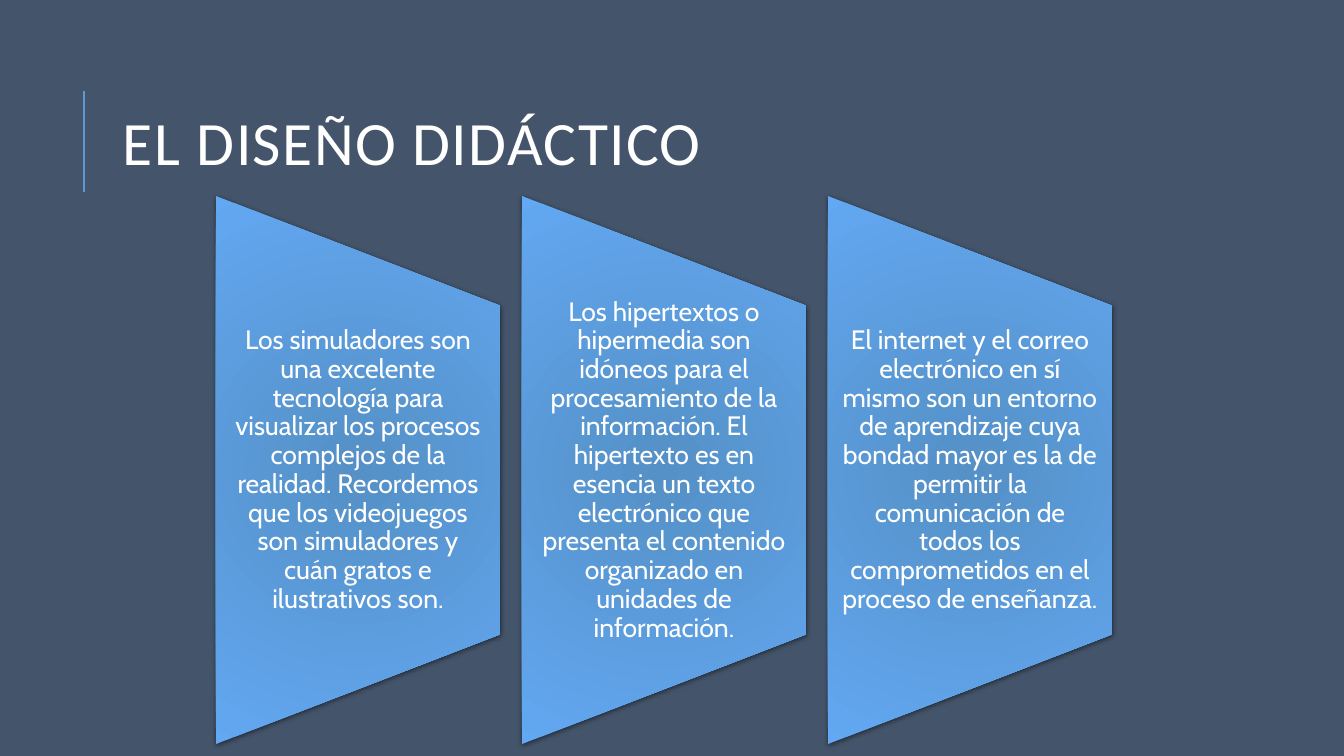
from lxml.etree import SubElement
from pptx import Presentation
from pptx.dml.color import RGBColor
from pptx.enum.shapes import MSO_CONNECTOR as Connector, MSO_SHAPE as Shape
from pptx.enum.text import MSO_ANCHOR as Anchor, PP_ALIGN as Align
from pptx.oxml.ns import qn
from pptx.util import Pt

HEADING = "EL DISEÑO DIDÁCTICO"
TOPICS = [
    "Los simuladores son una excelente tecnología para visualizar los procesos complejos de la realidad. "
    "Recordemos que los videojuegos son simuladores y cuán gratos e ilustrativos son.",
    "Los hipertextos o hipermedia son idóneos para el procesamiento de la información. El hipertexto es en "
    "esencia un texto electrónico que presenta el contenido organizado en unidades de información.",
    "El internet y el correo electrónico en sí mismo son un entorno de aprendizaje cuya bondad mayor es la de "
    "permitir la comunicación de todos los comprometidos en el proceso de enseñanza.",
]

THEME = {
    "background": "44546A", "accent": "5B9BD5", "panel": ("5590C6", "62A8F2"), "shadow": "000000",
    "heading": {"name": "Calibri", "size": Pt(44), "color": "FFFFFF"},
    "topic": {"name": "Cabin", "size": Pt(19), "color": "FFFFFF"},
}
SLIDE = (1344, 756)
RULE = (84, 192, 84, 91)
HEADING_BOX = (113, 65, 1071, 165)
PANEL_LEFT, PANEL_TOP, PANEL_WIDTH, PANEL_HEIGHT = 216, 196, 284, 548
PANEL_PITCH = 306
TOPIC_TOP, TOPIC_HEIGHT = 306, 329


def px(*lengths):
    return [round(length * 914400 / 100.8) for length in lengths]


def rgb(code):
    return RGBColor.from_string(code)


def set_all(target, values):
    for key, value in values.items():
        setattr(target, key, value)


def add_text(slide, box, words, style, align, spacing, insets):
    frame = slide.shapes.add_textbox(*px(*box)).text_frame
    left, top = px(*insets)
    set_all(frame, {"word_wrap": True, "vertical_anchor": Anchor.MIDDLE, "margin_left": left,
                    "margin_right": left, "margin_top": top, "margin_bottom": top})
    paragraph = frame.paragraphs[0]
    set_all(paragraph, {"alignment": align, "line_spacing": spacing})
    run = paragraph.add_run()
    run.text = words
    set_all(run.font, {"name": style["name"], "size": style["size"]})
    run.font.color.rgb = rgb(style["color"])
    return run


def add_panel(slide, left):
    x = left + (PANEL_WIDTH - PANEL_HEIGHT) / 2
    y = PANEL_TOP + (PANEL_HEIGHT - PANEL_WIDTH) / 2
    panel = slide.shapes.add_shape(Shape.FLOWCHART_MANUAL_OPERATION, *px(x, y, PANEL_HEIGHT, PANEL_WIDTH))
    panel.rotation = 270
    panel.line.fill.background()
    panel.shadow.inherit = False
    panel.fill.gradient()
    for stop, code in zip(panel.fill.gradient_stops, THEME["panel"]):
        stop.color.rgb = rgb(code)
    properties = panel._element.spPr
    gradient = properties.find(qn("a:gradFill"))
    gradient.remove(gradient.find(qn("a:lin")))
    radial = SubElement(gradient, qn("a:path"), {"path": "circle"})
    SubElement(radial, qn("a:fillToRect"), dict.fromkeys("ltrb", "100000"))
    shadow = SubElement(properties.find(qn("a:effectLst")), qn("a:outerShdw"), {
        "blurRad": str(Pt(4)), "dist": str(Pt(1)), "dir": "5400000", "rotWithShape": "0"})
    tint = SubElement(shadow, qn("a:srgbClr"), {"val": THEME["shadow"]})
    SubElement(tint, qn("a:alpha"), {"val": "50000"})


def main():
    deck = Presentation()
    deck.slide_width, deck.slide_height = px(*SLIDE)
    slide = deck.slides.add_slide(deck.slide_layouts[6])
    slide.background.fill.solid()
    slide.background.fill.fore_color.rgb = rgb(THEME["background"])

    rule = slide.shapes.add_connector(Connector.STRAIGHT, *px(*RULE))
    rule.line.color.rgb = rgb(THEME["accent"])
    rule.line.width = Pt(1.5)
    SubElement(rule._element.spPr, qn("a:effectLst"))

    heading = add_text(slide, HEADING_BOX, HEADING, THEME["heading"], Align.LEFT, 0.8, (10, 5))
    heading.font._element.set("spc", "100")

    for index, topic in enumerate(TOPICS):
        left = PANEL_LEFT + index * PANEL_PITCH
        add_panel(slide, left)
        add_text(slide, (left, TOPIC_TOP, PANEL_WIDTH, TOPIC_HEIGHT), topic, THEME["topic"],
                 Align.CENTER, 0.9, (13, 0))

    deck.save("out.pptx")


if __name__ == "__main__":
    main()
